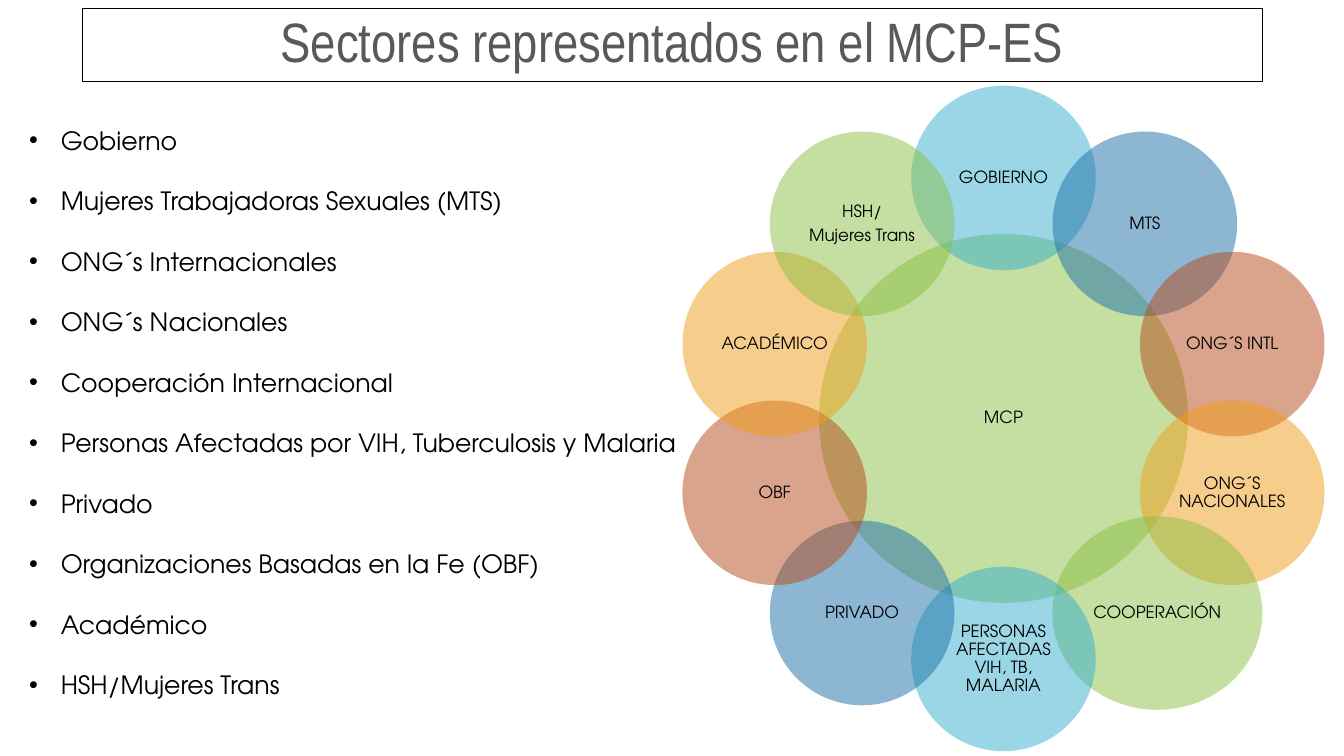
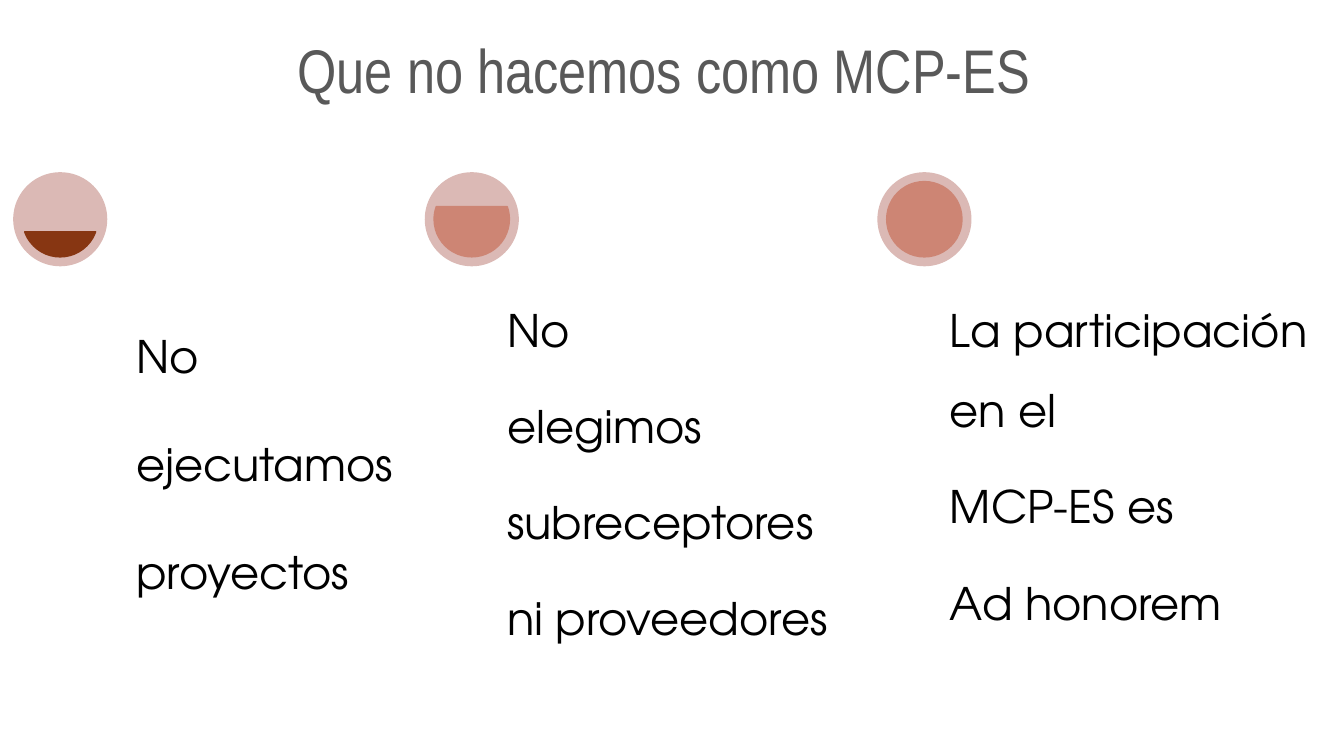
from dataclasses import dataclass
from math import cos, radians, sin

from lxml.etree import SubElement
from pptx import Presentation
from pptx.dml.color import RGBColor
from pptx.enum.shapes import MSO_SHAPE as Preset
from pptx.enum.text import MSO_ANCHOR as Anchor, MSO_AUTO_SIZE as AutoSize, PP_ALIGN as Align
from pptx.oxml.ns import qn
from pptx.shapes.base import BaseShape
from pptx.slide import Slide
from pptx.text.text import TextFrame
from pptx.util import Pt

COLORS = {
    "title": "595959",
    "text": "000000",
    "green": "8BC145",
    "cyan": "36AFCE",
    "blue": "1D6FA9",
    "rust": "B74919",
    "amber": "F19D19",
    "ring": "DBB9B5",
    "brown": "873612",
    "salmon": "CD8574",
}
TITLE_FONT = "Arial Narrow"
BODY_FONT = "TeX Gyre Adventor"
AFTER_RATIO = 0.35

WHEEL_X, WHEEL_Y, WHEEL_RADIUS = 716.8, 298.9, 171.8
HUB_SIZE, PETAL_SIZE = 263.6, 131.8

RING_TOP, RING_SIZE = 123, 67.2
LEVEL_SIZE = 53.8
POINTS_TOP, POINTS_HEIGHT = 190, 283


@dataclass(frozen=True)
class Sector:
    label: str
    color: str
    width: float = PETAL_SIZE
    height: float = PETAL_SIZE
    shift: float = 0


@dataclass(frozen=True)
class Limit:
    text: str
    ring_left: float
    text_left: float
    text_width: float
    start: float
    end: float
    color: str
    line_spacing: float


SECTORS = [
    Sector("GOBIERNO", "cyan"),
    Sector("MTS", "blue"),
    Sector("ONG´S INTL", "rust"),
    Sector("ONG´S NACIONALES", "amber"),
    Sector("COOPERACIÓN", "green", 150, 138.2, 8.9),
    Sector("PERSONAS AFECTADAS VIH, TB, MALARIA", "cyan"),
    Sector("PRIVADO", "blue"),
    Sector("OBF", "rust"),
    Sector("ACADÉMICO", "amber"),
    Sector("HSH/\nMujeres Trans", "green"),
]

SECTOR_NAMES = [
    "Gobierno",
    "Mujeres Trabajadoras Sexuales (MTS)",
    "ONG´s Internacionales",
    "ONG´s Nacionales",
    "Cooperación Internacional",
    "Personas Afectadas por VIH, Tuberculosis y Malaria",
    "Privado",
    "Organizaciones Basadas en la Fe (OBF)",
    "Académico",
    "HSH/Mujeres Trans",
]

LIMITS = [
    Limit("No ejecutamos proyectos", 9.4, 90.7, 199, 19.47, 160.53, "brown", 2),
    Limit("No\nelegimos\nsubreceptores\nni proveedores",
          303.4, 355.7, 257, 340.53, 199.47, "salmon", 1.5),
    Limit("La participación en el\nMCP-ES es\nAd honorem",
          626.7, 671.8, 272, 270, 270, "salmon", 1.5),
]


def rgb(name: str) -> RGBColor:
    return RGBColor.from_string(COLORS[name])


def place(shape: BaseShape, left: float, top: float, width: float, height: float) -> None:
    shape.left, shape.top = Pt(left), Pt(top)
    shape.width, shape.height = Pt(width), Pt(height)


def write(frame: TextFrame, text: str, size: float, spacing: float, after: float,
          align: Align = Align.LEFT, font: str = BODY_FONT, color: str = "text") -> None:
    frame.text = text
    frame.word_wrap = True
    frame.auto_size = AutoSize.NONE
    for paragraph in frame.paragraphs:
        paragraph.alignment = align
        paragraph.line_spacing = spacing
        paragraph.space_before = Pt(0)
        paragraph.space_after = Pt(after)
        for run in paragraph.runs:
            run.font.name = font
            run.font.size = Pt(size)
            run.font.color.rgb = rgb(color)


def set_insets(frame: TextFrame, inset: float) -> None:
    frame.margin_left = frame.margin_right = Pt(inset)
    frame.margin_top = frame.margin_bottom = Pt(inset)


def add_title(slide: Slide, text: str, size: float, left: float, top: float,
              width: float, height: float) -> BaseShape:
    title = slide.shapes.title
    place(title, left, top, width, height)
    write(title.text_frame, text, size, 0.9, 0, Align.CENTER, TITLE_FONT, "title")
    title.text_frame.vertical_anchor = Anchor.MIDDLE
    return title


def add_figure(slide: Slide, preset: Preset, color: str, left: float, top: float,
               width: float, height: float) -> BaseShape:
    figure = slide.shapes.add_shape(preset, Pt(left), Pt(top), Pt(width), Pt(height))
    figure.shadow.inherit = False
    figure.fill.solid()
    figure.fill.fore_color.rgb = rgb(color)
    figure.line.fill.background()
    return figure


def add_bubble(slide: Slide, sector: Sector, center_x: float, center_y: float) -> None:
    bubble = add_figure(slide, Preset.OVAL, sector.color, center_x - sector.width / 2,
                        center_y - sector.height / 2, sector.width, sector.height)
    tint = bubble.element.spPr.find(qn("a:solidFill")).find(qn("a:srgbClr"))
    SubElement(tint, qn("a:alpha")).set("val", "50000")
    write(bubble.text_frame, sector.label, 12, 0.9, 12 * AFTER_RATIO, Align.CENTER)
    set_insets(bubble.text_frame, 1.2)
    bubble.text_frame.vertical_anchor = Anchor.MIDDLE


def add_wheel(slide: Slide) -> None:
    add_bubble(slide, Sector("MCP", "green", HUB_SIZE, HUB_SIZE), WHEEL_X, WHEEL_Y)
    for index, sector in enumerate(SECTORS):
        angle = radians(index * 360 / len(SECTORS))
        add_bubble(slide, sector, WHEEL_X + WHEEL_RADIUS * sin(angle) + sector.shift,
                   WHEEL_Y - WHEEL_RADIUS * cos(angle))


def add_sector_list(slide: Slide) -> None:
    names = slide.placeholders[1]
    place(names, 13.7, 85.7, 494, 422)
    write(names.text_frame, "\n".join(SECTOR_NAMES), 18, 1, 21.6)
    names.text_frame.vertical_anchor = Anchor.TOP
    for paragraph in names.text_frame.paragraphs:
        properties = paragraph._p.get_or_add_pPr()
        properties.set("marL", str(Pt(22.5)))
        properties.set("indent", str(Pt(-22.5)))
        SubElement(properties, qn("a:buFont")).set("typeface", "Arial")
        SubElement(properties, qn("a:buChar")).set("char", "•")


def add_limit(slide: Slide, limit: Limit) -> None:
    add_figure(slide, Preset.OVAL, "ring", limit.ring_left, RING_TOP, RING_SIZE, RING_SIZE)
    border = (RING_SIZE - LEVEL_SIZE) / 2
    level = add_figure(slide, Preset.CHORD, limit.color, limit.ring_left + border,
                       RING_TOP + border, LEVEL_SIZE, LEVEL_SIZE)
    level.line.color.rgb = rgb(limit.color)
    level.line.width = Pt(1)
    for index, degrees in enumerate((limit.start, limit.end)):
        level.adjustments[index] = degrees * 0.6
    points = slide.shapes.add_textbox(Pt(limit.text_left), Pt(POINTS_TOP),
                                      Pt(limit.text_width), Pt(POINTS_HEIGHT))
    write(points.text_frame, limit.text, 32, limit.line_spacing, 32 * AFTER_RATIO)
    set_insets(points.text_frame, 6.7)


def main() -> None:
    deck = Presentation()
    deck.slide_width, deck.slide_height = Pt(960), Pt(540)

    sectors = deck.slides.add_slide(deck.slide_layouts[1])
    heading = add_title(sectors, "Sectores representados en el MCP-ES", 39.6,
                        58.6, 6, 843, 52)
    heading.line.color.rgb = rgb("text")
    heading.line.width = Pt(0.25)
    add_wheel(sectors)
    add_sector_list(sectors)

    limits = deck.slides.add_slide(deck.slide_layouts[5])
    add_title(limits, "Que no hacemos como MCP-ES", 44, 60.5, 0, 828, 104.4)
    for limit in LIMITS:
        add_limit(limits, limit)

    deck.save("out.pptx")


if __name__ == "__main__":
    main()
